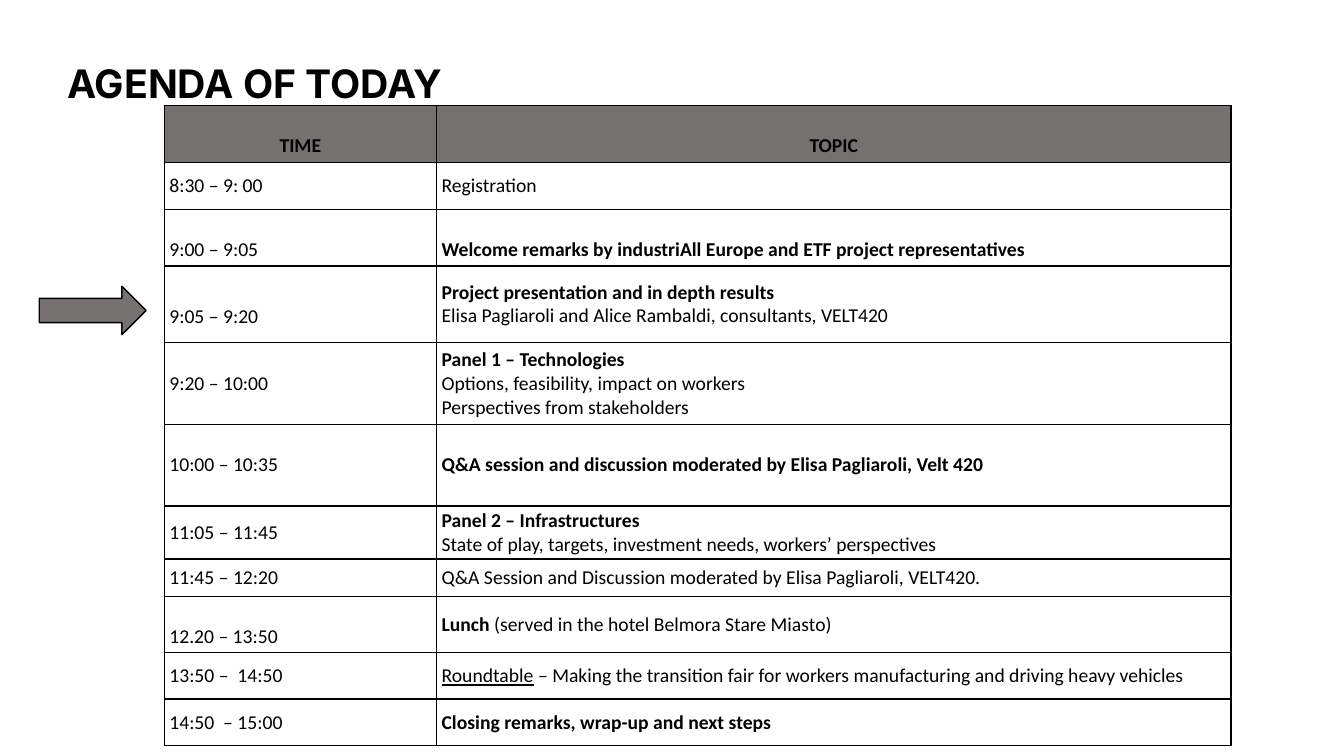
"""Build the agenda slide with its timetable and current-item arrow."""
from pptx import Presentation
from pptx import util as u
from pptx.dml.color import RGBColor
from pptx.enum import shapes, text
from pptx.oxml import parse_xml
from pptx.oxml.ns import nsdecls

BLACK = RGBColor(0x00, 0x00, 0x00)
GREY = RGBColor(0x76, 0x71, 0x71)
WHITE = RGBColor(0xFF, 0xFF, 0xFF)
LINE_OFFSET = 0.24


def add_run(p, content, size=14, font="Calibri", bold=False, underline=False):
    r = p.add_run()
    r.text = content
    r.font.size = u.Pt(size)
    r.font.name = font
    r.font.bold = bold
    r.font.underline = underline
    r.font.color.rgb = BLACK


def add_borders(cell):
    tcPr = cell._tc.get_or_add_tcPr()
    for side in "LRTB":
        tcPr.append(parse_xml(
            f'<a:ln{side} {nsdecls("a")} w="12700"><a:solidFill>'
            f'<a:srgbClr val="{BLACK}"/></a:solidFill></a:ln{side}>'))


BOLD = {"bold": True}
PLAIN = {}
UNDERLINED = {"underline": True}

# Each row: height, (time lowered, topic lowered), time, topic lines of runs
agenda = [
    (0.47, (False, False), "8:30 – 9: 00", [[("Registration", PLAIN)]]),
    (0.56, (True, True), "9:00 – 9:05",
     [[("Welcome remarks by industriAll Europe and ETF project representatives", BOLD)]]),
    (0.76, (True, False), "9:05 – 9:20",
     [[("Project presentation and in depth results", BOLD)],
      [("Elisa Pagliaroli and Alice Rambaldi, consultants, VELT420", PLAIN)]]),
    (0.81, (False, False), "9:20 – 10:00",
     [[("Panel 1 – Technologies", BOLD)],
      [("Options, feasibility, impact on workers", PLAIN)],
      [("Perspectives from stakeholders", PLAIN)]]),
    (0.81, (False, False), "10:00 – 10:35",
     [[("Q&A session and discussion moderated by Elisa Pagliaroli, Velt 420", BOLD)]]),
    (0.52, (False, False), "11:05 – 11:45",
     [[("Panel 2 – Infrastructures", BOLD)],
      [("State of play, targets, investment needs, workers’ perspectives", PLAIN)]]),
    (0.37, (False, False), "11:45 – 12:20",
     [[("Q&A Session and Discussion moderated by Elisa Pagliaroli, VELT420.", PLAIN)]]),
    (0.56, (True, False), "12.20 – 13:50",
     [[("Lunch", BOLD), (" (served in the hotel Belmora Stare Miasto)", PLAIN)]]),
    (0.46, (False, False), "13:50 –  14:50",
     [[("Roundtable", UNDERLINED),
       (" – Making the transition fair for workers manufacturing and driving heavy vehicles", PLAIN)]]),
    (0.46, (False, False), "14:50  – 15:00",
     [[("Closing remarks, wrap-up and next steps", BOLD)]]),
]
rows = [(0.56, (True, True), [[("TIME", BOLD)]], [[("TOPIC", BOLD)]])]
rows += [(height, lowered, [[(time, PLAIN)]], topic) for height, lowered, time, topic in agenda]

prs = Presentation()
prs.slide_width, prs.slide_height = u.Inches(13.33), u.Inches(7.5)
s = prs.slides.add_slide(prs.slide_layouts[6])

title = s.shapes.add_textbox(u.Inches(0.57), u.Inches(0.31), u.Inches(9.14), u.Inches(0.73))
tf = title.text_frame
tf.word_wrap = True
tf.auto_size = text.MSO_AUTO_SIZE.SHAPE_TO_FIT_TEXT
tf.paragraphs[0].line_spacing = 1.5
add_run(tf.paragraphs[0], "AGENDA OF TODAY", size=28, font="Inter", bold=True)

table = s.shapes.add_table(len(rows), 2, u.Inches(1.63), u.Inches(1.05),
                           u.Inches(10.58), u.Inches(6.34)).table
table.first_row = True
table.horz_banding = False
for column, width in zip(table.columns, (2.7, 7.88)):
    column.width = u.Inches(width)

for i, (height, lowered, *contents) in enumerate(rows):
    table.rows[i].height = u.Inches(height)
    for j, lines in enumerate(contents):
        cell = table.cell(i, j)
        add_borders(cell)
        cell.fill.solid()
        cell.fill.fore_color.rgb = GREY if i == 0 else WHITE
        cell.vertical_anchor = text.MSO_ANCHOR.MIDDLE
        cell.margin_left = cell.margin_right = u.Inches(0.05)
        cell.margin_top = u.Inches(0.03 + LINE_OFFSET * lowered[j])
        cell.margin_bottom = u.Inches(0.03)
        tf = cell.text_frame
        for k, runs in enumerate(lines):
            p = tf.add_paragraph() if k else tf.paragraphs[0]
            p.alignment = text.PP_ALIGN.CENTER if i == 0 else text.PP_ALIGN.LEFT
            for content, style in runs:
                add_run(p, content, **style)

arrow = s.shapes.add_shape(shapes.MSO_SHAPE.RIGHT_ARROW, u.Inches(0.39), u.Inches(2.84),
                           u.Inches(1.06), u.Inches(0.48))
arrow.shadow.inherit = False
arrow.fill.solid()
arrow.fill.fore_color.rgb = GREY
arrow.line.color.rgb = BLACK
arrow.line.width = u.Pt(1)

prs.save("out.pptx")
